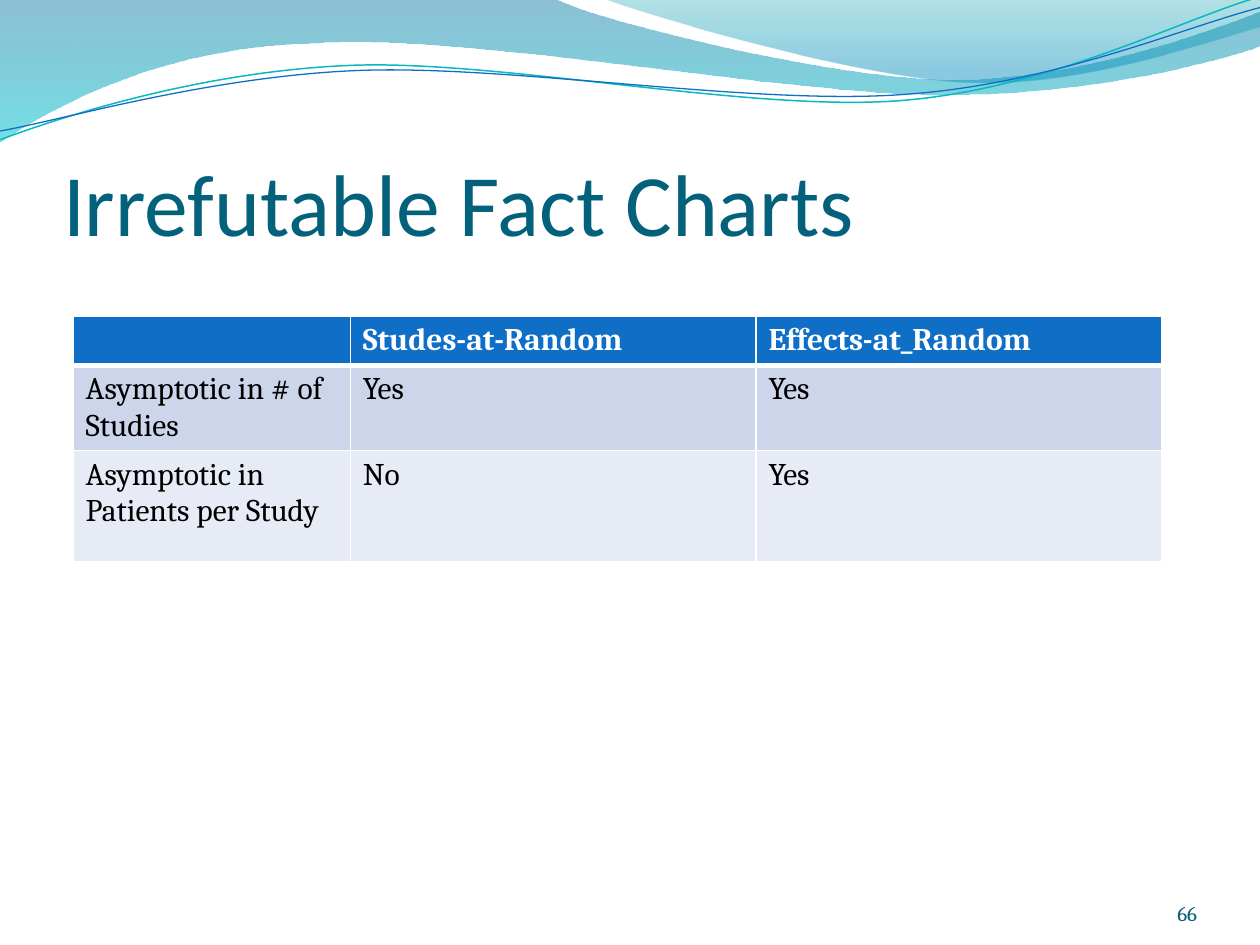
from math import cos, radians, sin

from lxml.etree import SubElement
from pptx import Presentation
from pptx.dml.color import RGBColor
from pptx.enum.text import MSO_ANCHOR, PP_ALIGN
from pptx.oxml import parse_xml
from pptx.oxml.ns import nsdecls, qn
from pptx.util import Pt

WHITE, BLACK, BLUE, TEAL = "FFFFFF", "000000", "0F6FC6", "04617B"
BANDS = ["CCD5EA", "E7EBF5"]


def color(value):
    return RGBColor.from_string(value)


def inches(*values):
    return [Pt(v * 72) for v in values]


def turn(x, y, box, angle):
    """Turn a point clockwise about the centre of a box."""
    cx, cy = box[0] + box[2] / 2, box[1] + box[3] / 2
    c, s = cos(radians(angle)), sin(radians(angle))
    return cx + (x - cx) * c - (y - cy) * s, cy + (x - cx) * s + (y - cy) * c


class SlideBuilder:
    heading, body = "Calibri", "Cambria"

    def __init__(self, prs):
        self.s = prs.slides.add_slide(prs.slide_layouts[5])

    def style(self, p, size, rgb, font=None, bold=False, align=PP_ALIGN.LEFT):
        p.alignment = align
        p.font.name = font or self.body
        p.font.size = Pt(size)
        p.font.bold = bold
        p.font.color.rgb = color(rgb)

    def frame(self, sp, text, top_inset=0):
        tf = sp.text_frame
        tf.word_wrap = True
        tf.vertical_anchor = MSO_ANCHOR.BOTTOM
        tf.margin_left = tf.margin_right = tf.margin_bottom = 0
        tf.margin_top = Pt(top_inset)
        tf.text = text
        return tf.paragraphs[0]

    def title(self, text, box):
        sp = self.s.shapes.title
        sp.left, sp.top, sp.width, sp.height = inches(*box)
        self.style(self.frame(sp, text, 3.6), 50, TEAL, self.heading)

    def page_number(self, text, box):
        sp = self.s.shapes.add_textbox(*inches(*box))
        self.style(self.frame(sp, text), 12, "045D75", align=PP_ALIGN.RIGHT)

    def wave(self, box, segments, close=False, tilt=0):
        """Segments are flat lists: a corner has one point, a curve three."""
        segments = [[inches(*turn(*xy, box, tilt)) for xy in zip(seg[::2], seg[1::2])]
                    for seg in segments]
        ends = [seg[-1] for seg in segments]
        builder = self.s.shapes.build_freeform(*ends[0])
        builder.add_line_segments(ends[1:], close=close)
        sp = builder.convert_to_shape()
        sp.shadow.inherit = False
        sp.left, sp.top, sp.width, sp.height = inches(*box)
        sp.rotation = -tilt

        # Redraw the outline in the box, with true curves
        outline = next(sp._element.iter(qn("a:path")))
        outline.set("w", str(sp.width))
        outline.set("h", str(sp.height))
        for step, seg in zip(list(outline), segments):
            curved = len(seg) == 3
            if curved:
                step.tag = qn("a:cubicBezTo")
            for pt in list(step):
                step.remove(pt)
            for x, y in seg:
                pt = SubElement(step, qn("a:pt"))
                pt.set("x", str(x - sp.left))
                pt.set("y", str(y - sp.top))
        return sp

    def wave_area(self, box, segments, stops):
        sp = self.wave(box, segments, close=True)
        sp.line.fill.background()
        sp.fill.gradient()
        sp.fill.gradient_angle = 270
        for stop, (position, rgb, _) in zip(sp.fill.gradient_stops, stops):
            stop.position = position
            stop.color.rgb = color(rgb)
        for clr, (_, _, opacity) in zip(sp._element.spPr.iter(qn("a:srgbClr")), stops):
            SubElement(clr, qn("a:alpha")).set("val", str(opacity * 1000))

    def wave_line(self, box, segments, rgb, width):
        sp = self.wave(box, segments, tilt=2.7)
        sp.fill.background()
        sp.line.color.rgb = color(rgb)
        sp.line.width = Pt(width)

    def borders(self, cell, **widths):
        tcPr = cell._tc.get_or_add_tcPr()
        for i, side in enumerate("LRTB"):
            width = Pt(widths.get(side, 1))
            tcPr.insert(i, parse_xml(
                f'<a:ln{side} {nsdecls("a")} w="{width}"><a:solidFill>'
                f'<a:srgbClr val="{WHITE}"/></a:solidFill></a:ln{side}>'))

    def table(self, rows, left, top, widths, heights):
        box = inches(left, top, sum(widths), sum(heights))
        table = self.s.shapes.add_table(len(rows), len(widths), *box).table
        for column, width in zip(table.columns, inches(*widths)):
            column.width = width
        for row, height in zip(table.rows, inches(*heights)):
            row.height = height
        for i, texts in enumerate(rows):
            header = i == 0
            for j, text in enumerate(texts):
                cell = table.cell(i, j)
                cell.text = text
                self.style(cell.text_frame.paragraphs[0], 18,
                           WHITE if header else BLACK, bold=header)
                cell.fill.solid()
                cell.fill.fore_color.rgb = color(BLUE if header else BANDS[(i - 1) % 2])
                self.borders(cell, **({"B": 3} if header else {"T": 3} if i == 1 else {}))


def main():
    prs = Presentation()
    prs.slide_width, prs.slide_height = inches(10, 7.5)
    slide = SlideBuilder(prs)

    # Waves across the top
    slide.wave_area(
        (-0.01, -0.01, 10.02, 1.14),
        [(0, 0), (4.4, -0.01),
         (4.76, 0.17, 6.64, 0.63, 7.58, 0.63),
         (8.53, 0.63, 9.58, 0.26, 10, 0.09), (10.01, 0.36),
         (9.83, 0.44, 8.7, 0.76, 7.46, 0.75),
         (6.22, 0.75, 3.82, 0.28, 2.57, 0.34),
         (1.29, 0.36, 0.46, 0.83, -0.01, 1.13), (0, 0)],
        [(0, "0074A1", 45), (1, "00C6CF", 55)])
    slide.wave_area(
        (4.79, -0.01, 5.21, 0.7),
        [(4.79, -0.01), (5.09, 0.11, 6.82, 0.62, 7.69, 0.65),
         (8.56, 0.69, 9.61, 0.32, 10, 0.21), (10, 0), (4.79, -0.01)],
        [(0, "00A1A9", 30), (0.8, "008BBF", 45)])
    slide.wave_line(
        (-0.02, 0.22, 10.02, 0.71),
        [(0, 1.11), (0.48, 0.93, 1.58, 0.57, 2.77, 0.52),
         (3.95, 0.47, 5.93, 0.89, 7.13, 0.8),
         (8.33, 0.71, 9.38, 0.15, 9.98, -0.02)], "0AB8BF", 0.85)
    slide.wave_line(
        (-0.02, 0.3, 10.03, 0.58),
        [(0, 1.04), (0.47, 0.96, 1.64, 0.61, 2.83, 0.56),
         (4.03, 0.51, 5.97, 0.84, 7.17, 0.75),
         (8.36, 0.67, 9.41, 0.21, 10, 0.06)], BLUE, 0.75)

    # Title, comparison table and page number
    slide.title("Irrefutable Fact Charts", (0.5, 0.77, 9, 1.25))
    slide.table([["", "Studes-at-Random", "Effects-at_Random"],
                 ["Asymptotic in # of Studies", "Yes", "Yes"],
                 ["Asymptotic in Patients per Study", "No", "Yes"]],
                0.58, 2.51, [2.2, 3.22, 3.22], [0.36, 0.62, 0.88])
    slide.page_number("66", (8.67, 6.95, 0.83, 0.4))

    prs.save("out.pptx")


if __name__ == "__main__":
    main()
